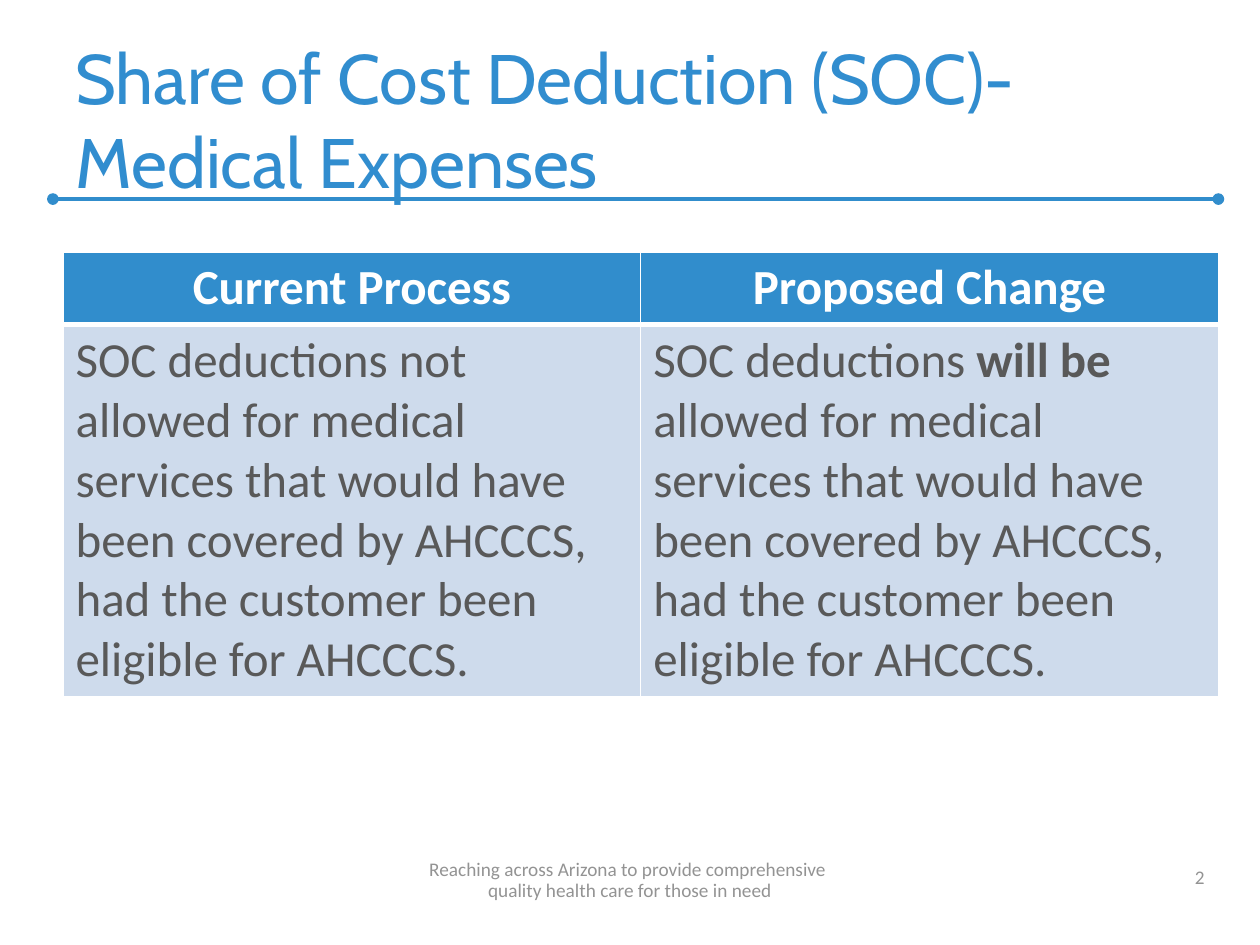
from pptx import Presentation
from pptx import util as u
from pptx.dml.color import RGBColor
from pptx.enum import shapes, text
from pptx.oxml.ns import qn
from lxml import etree

BLUE = RGBColor(0x31, 0x8D, 0xCC)
TITLE_BLUE = RGBColor(0x31, 0x8D, 0xCF)
PALE = RGBColor(0xCE, 0xDB, 0xEC)
DARK = RGBColor(0x59, 0x59, 0x59)
GRAY = RGBColor(0x93, 0x93, 0x93)
WHITE = RGBColor(0xFF, 0xFF, 0xFF)

RULE = "allowed for medical services that would have been covered by AHCCCS, had the customer been eligible for AHCCCS."
COLUMNS = [
    ("Current Process", [("SOC deductions not " + RULE, False)]),
    ("Proposed Change", [("SOC deductions ", False), ("will be ", True), (RULE, False)]),
]


def add_run(p, words, size, color, font="Calibri", bold=False):
    r = p.add_run()
    r.text = words
    r.font.name = font
    r.font.size = u.Pt(size)
    r.font.bold = bold
    r.font.color.rgb = color


def add_lines(p, lines, *style):
    for i, line in enumerate(lines):
        if i:
            p.add_line_break()
        add_run(p, line, *style)


def add_title(s, x, y, w, h):
    sp = s.shapes.title
    sp.left, sp.top, sp.width, sp.height = map(u.Inches, (x, y, w, h))
    tf = sp.text_frame
    tf.word_wrap = True
    tf.auto_size = text.MSO_AUTO_SIZE.NONE
    tf.vertical_anchor = text.MSO_ANCHOR.BOTTOM
    p = tf.paragraphs[0]
    p.alignment = text.PP_ALIGN.LEFT
    add_lines(p, ["Share of Cost Deduction (SOC)-", "Medical Expenses"], 40, TITLE_BLUE, "Cabin")


def add_rule(s, x, y, w):
    cx = s.shapes.add_connector(shapes.MSO_CONNECTOR.STRAIGHT, u.Inches(x), u.Inches(y),
                                u.Inches(x + w), u.Inches(y))
    cx.line.color.rgb = BLUE
    cx.line.width = u.Pt(2.25)
    ln = cx.line._get_or_add_ln()
    for end in ("a:headEnd", "a:tailEnd"):
        etree.SubElement(ln, qn(end), type="oval")
    etree.SubElement(cx._element.spPr, qn("a:effectLst"))


def set_borders(cell, bottom):
    tc_pr = cell._tc.get_or_add_tcPr()
    for side, width in zip("LRTB", (1, 1, 1, bottom)):
        ln = etree.SubElement(tc_pr, qn("a:ln" + side), w=str(u.Pt(width)))
        fill = etree.SubElement(ln, qn("a:solidFill"))
        etree.SubElement(fill, qn("a:srgbClr"), val=str(WHITE))


def fill_cell(cell, runs, color, fill, align, bottom):
    set_borders(cell, bottom)
    cell.fill.solid()
    cell.fill.fore_color.rgb = fill
    p = cell.text_frame.paragraphs[0]
    p.alignment = align
    for words, bold in runs:
        add_run(p, words, 28, color, bold=bold)


def add_comparison(s, x, y, w, h):
    head = 0.57
    tbl = s.shapes.add_table(2, len(COLUMNS), u.Inches(x), u.Inches(y), u.Inches(w), u.Inches(h)).table
    tbl.horz_banding = False
    tbl.rows[0].height = u.Inches(head)
    tbl.rows[1].height = u.Inches(h - head)
    for i, (heading, body) in enumerate(COLUMNS):
        tbl.columns[i].width = u.Inches(w / len(COLUMNS))
        fill_cell(tbl.cell(0, i), [(heading, True)], WHITE, BLUE, text.PP_ALIGN.CENTER, 3)
        fill_cell(tbl.cell(1, i), body, DARK, PALE, text.PP_ALIGN.LEFT, 1)


def add_footer_text(s, x, y, w, h, lines, align, spacing=None):
    tf = s.shapes.add_textbox(*map(u.Inches, (x, y, w, h))).text_frame
    tf.word_wrap = True
    tf.vertical_anchor = text.MSO_ANCHOR.BOTTOM
    p = tf.paragraphs[0]
    p.alignment = align
    p.line_spacing = spacing
    add_lines(p, lines, 11, GRAY)


def main():
    prs = Presentation()
    prs.slide_width, prs.slide_height = u.Inches(10), u.Inches(7.5)
    s = prs.slides.add_slide(prs.slide_layouts[5])
    add_rule(s, 0.42, 1.58, 9.25)
    add_title(s, 0.5, 0.33, 9.08, 1.33)
    add_comparison(s, 0.5, 2, 9.17, 3.47)
    add_footer_text(s, 7.33, 6.78, 2.33, 0.32, ["2"], text.PP_ALIGN.RIGHT)
    add_footer_text(s, 0, 6.78, 10, 0.42,
                    ["Reaching across Arizona to provide comprehensive ",
                     "quality health care for those in need"],
                    text.PP_ALIGN.CENTER, u.Pt(12))
    prs.save("out.pptx")


if __name__ == "__main__":
    main()
